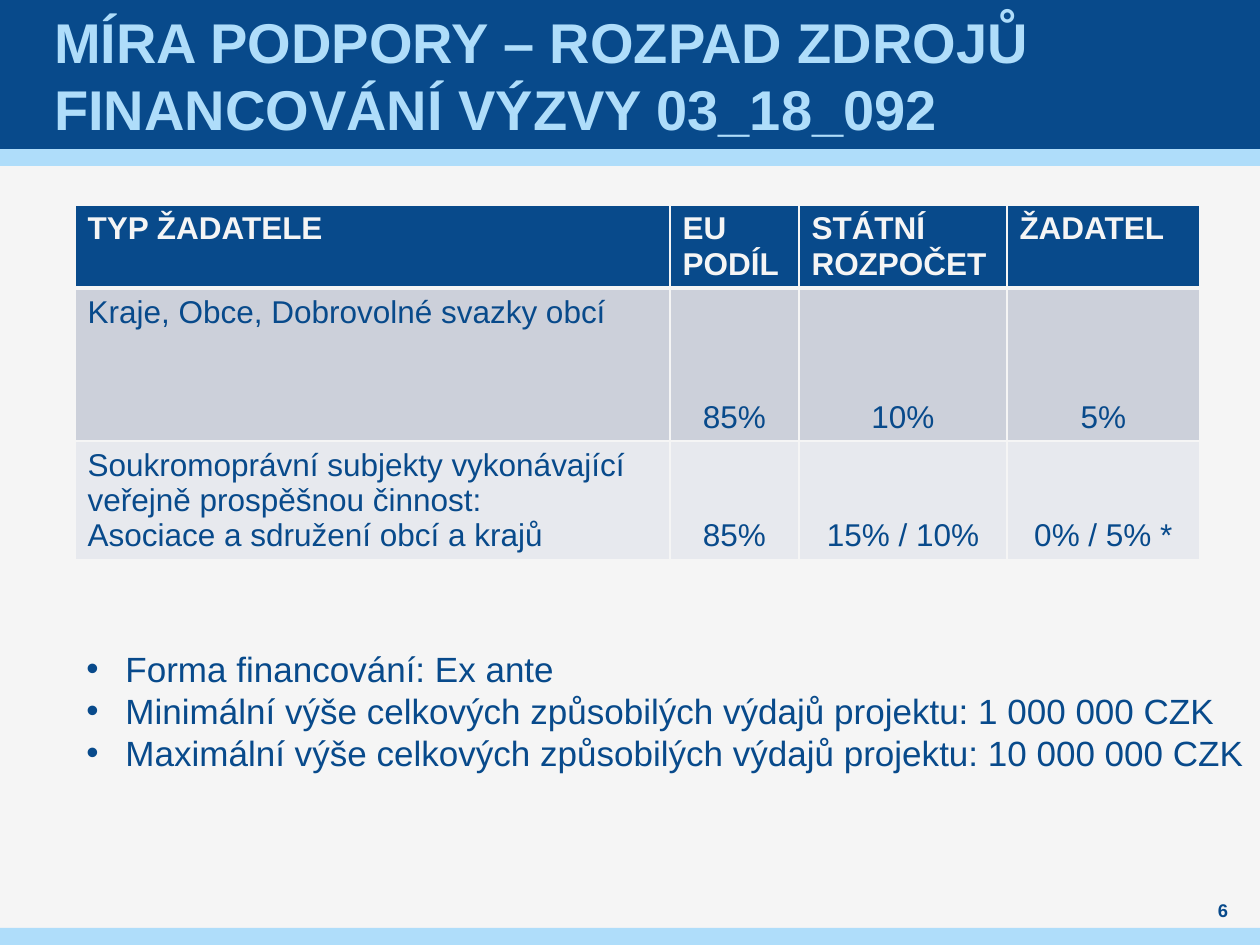
import dataclasses

import lxml.etree
import pptx
import pptx.dml.color
import pptx.enum.shapes
import pptx.enum.text
import pptx.oxml.ns
import pptx.util

PX = 914400 // 126  # one px in EMU
WIDTH, HEIGHT = 1260, 945
FONT = "Arial"
NAVY, SKY, PALE = "084A8B", "AFDDFA", "F5F5F5"
ROW_FILLS = [NAVY, "CCD0DA", "E7E9EE"]
LEFT, CENTER = pptx.enum.text.PP_ALIGN.LEFT, pptx.enum.text.PP_ALIGN.CENTER
TOP, MIDDLE, BOTTOM = (pptx.enum.text.MSO_ANCHOR.TOP,
                       pptx.enum.text.MSO_ANCHOR.MIDDLE,
                       pptx.enum.text.MSO_ANCHOR.BOTTOM)


@dataclasses.dataclass
class Box:
    left: int
    top: int
    width: int
    height: int

    def emu(self) -> list[int]:
        return [value * PX for value in dataclasses.astuple(self)]


BANDS = [(Box(0, 149, WIDTH, 17), SKY),
         (Box(0, 0, WIDTH, 149), NAVY),
         (Box(0, 928, WIDTH, 17), SKY)]
COLUMN_WIDTHS = [595, 129, 208, 193]
ROW_HEIGHTS = [83, 153, 118]
TABLE_ROWS = [
    ["TYP ŽADATELE", "EU PODÍL", "STÁTNÍ ROZPOČET", "ŽADATEL"],
    ["Kraje, Obce, Dobrovolné svazky obcí", "85%", "10%", "5%"],
    ["Soukromoprávní subjekty vykonávající veřejně prospěšnou činnost:\n"
     "Asociace a sdružení obcí a krajů", "85%", "15% / 10%", "0% / 5% *"],
]
BULLETS = """Forma financování: Ex ante
Minimální výše celkových způsobilých výdajů projektu: 1 000 000 CZK
Maximální výše celkových způsobilých výdajů projektu: 10 000 000 CZK"""


def rgb(color: str) -> pptx.dml.color.RGBColor:
    return pptx.dml.color.RGBColor.from_string(color)


def write_text(frame, text: str, *, size: float, color: str = NAVY,
               bold: bool = False, align=LEFT) -> None:
    """Fill a text frame, one paragraph per line."""
    frame.text = text
    for paragraph in frame.paragraphs:
        paragraph.alignment = align
        for run in paragraph.runs:
            run.font.name = FONT
            run.font.size = pptx.util.Pt(size)
            run.font.bold = bold
            run.font.color.rgb = rgb(color)


def set_insets(frame, horizontal: int) -> None:
    frame.margin_left = frame.margin_right = horizontal * PX
    frame.margin_top = frame.margin_bottom = 0


def place(shape, box: Box) -> None:
    shape.left, shape.top, shape.width, shape.height = box.emu()


def add_band(slide, box: Box, color: str) -> None:
    shape = slide.shapes.add_shape(
        pptx.enum.shapes.MSO_SHAPE.RECTANGLE, *box.emu())
    shape.shadow.inherit = False
    shape.fill.solid()
    shape.fill.fore_color.rgb = rgb(color)
    shape.line.fill.background()


def set_borders(cell, bottom: int = 1, top: int = 1) -> None:
    """Draw pale cell borders; they must come before the cell's fill."""
    properties = cell._tc.get_or_add_tcPr()
    widths = {"a:lnL": 1, "a:lnR": 1, "a:lnT": top, "a:lnB": bottom}
    for tag, points in widths.items():
        line = lxml.etree.SubElement(properties, pptx.oxml.ns.qn(tag),
                                     w=str(pptx.util.Pt(points)))
        fill = lxml.etree.SubElement(line, pptx.oxml.ns.qn("a:solidFill"))
        lxml.etree.SubElement(fill, pptx.oxml.ns.qn("a:srgbClr"), val=PALE)


def add_support_table(slide, left: int, top: int) -> None:
    box = Box(left, top, sum(COLUMN_WIDTHS), sum(ROW_HEIGHTS))
    table = slide.shapes.add_table(
        len(TABLE_ROWS), len(COLUMN_WIDTHS), *box.emu()).table
    for column, width in zip(table.columns, COLUMN_WIDTHS):
        column.width = width * PX
    for row, height in zip(table.rows, ROW_HEIGHTS):
        row.height = height * PX
    for row_index, texts in enumerate(TABLE_ROWS):
        header = row_index == 0
        for column_index, text in enumerate(texts):
            cell = table.cell(row_index, column_index)
            is_value = not header and column_index > 0
            set_borders(cell, bottom=3 if header else 1,
                        top=3 if row_index == 1 else 1)
            cell.fill.solid()
            cell.fill.fore_color.rgb = rgb(ROW_FILLS[row_index])
            cell.vertical_anchor = BOTTOM if is_value else TOP
            write_text(cell.text_frame, text, size=18, bold=header,
                       color=PALE if header else NAVY,
                       align=CENTER if is_value else LEFT)


def add_bullets(paragraph, indent: int) -> None:
    properties = paragraph._p.get_or_add_pPr()
    properties.set("marL", str(indent * PX))
    properties.set("indent", str(-indent * PX))
    lxml.etree.SubElement(properties, pptx.oxml.ns.qn("a:buFont"),
                          typeface=FONT)
    lxml.etree.SubElement(properties, pptx.oxml.ns.qn("a:buChar"), char="•")


def main() -> None:
    presentation = pptx.Presentation()
    presentation.slide_width = WIDTH * PX
    presentation.slide_height = HEIGHT * PX
    slide = presentation.slides.add_slide(presentation.slide_layouts[5])
    slide.background.fill.solid()
    slide.background.fill.fore_color.rgb = rgb(PALE)

    # Header and footer bands
    for box, color in BANDS:
        add_band(slide, box, color)

    # Title, brought in front of the bands
    title = slide.shapes.title
    slide.shapes._spTree.append(title._element)
    place(title, Box(49, 0, 1160, 149))
    set_insets(title.text_frame, 5)
    title.text_frame.vertical_anchor = MIDDLE
    title.text_frame.auto_size = pptx.enum.text.MSO_AUTO_SIZE.NONE
    write_text(title.text_frame,
               "MÍRA PODPORY – ROZPAD ZDROJŮ FINANCOVÁNÍ VÝZVY 03_18_092",
               size=32, color=SKY, bold=True)

    # Funding shares by applicant type
    add_support_table(slide, 75, 205)

    # Financing conditions
    conditions = slide.shapes.add_textbox(*Box(74, 641, 1192, 183).emu())
    conditions.text_frame.word_wrap = False
    write_text(conditions.text_frame, BULLETS, size=20)
    for paragraph in conditions.text_frame.paragraphs:
        add_bullets(paragraph, 39)

    # Slide number
    number = slide.shapes.add_textbox(*Box(1191, 898, 64, 25).emu())
    set_insets(number.text_frame, 0)
    number.text_frame.word_wrap = True
    number.text_frame.vertical_anchor = MIDDLE
    write_text(number.text_frame, "6", size=10.5, bold=True, align=CENTER)

    presentation.save("out.pptx")


if __name__ == "__main__":
    main()
